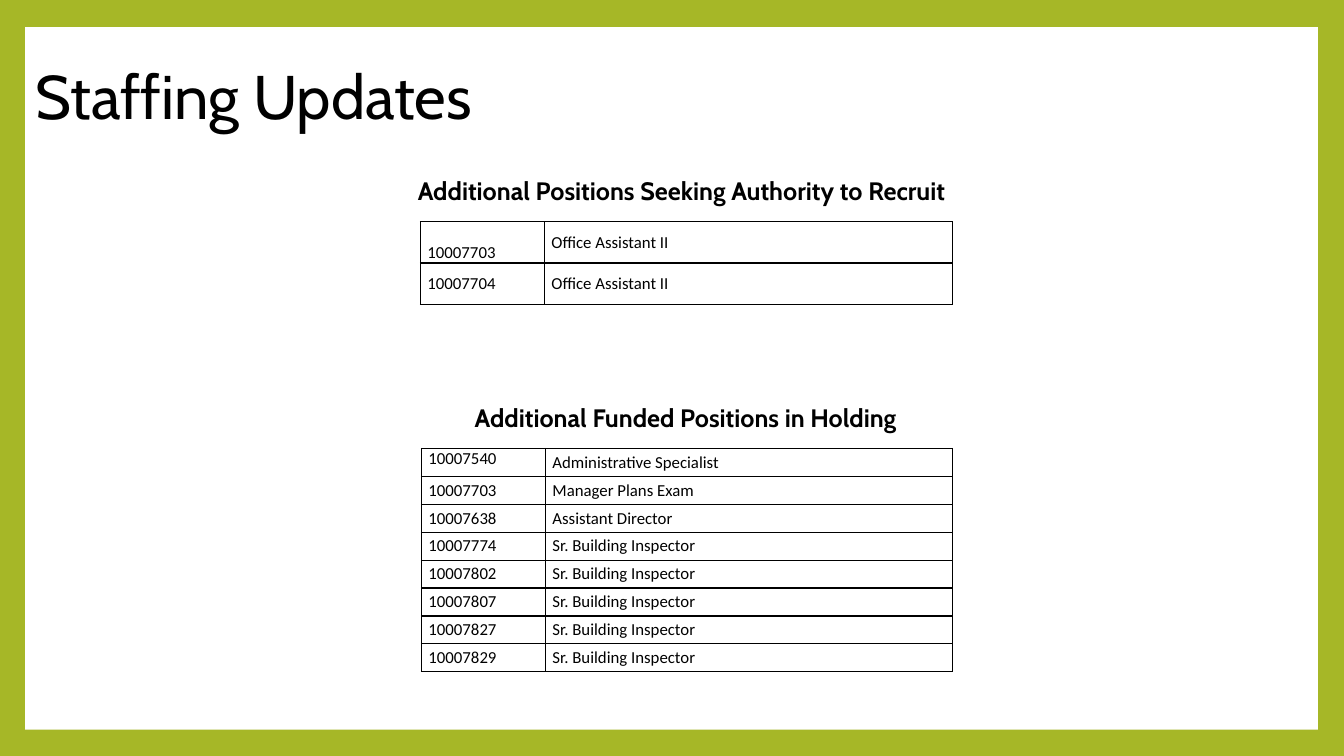
from dataclasses import dataclass

from lxml import etree
from pptx import Presentation
from pptx.dml.color import RGBColor
from pptx.enum.shapes import MSO_SHAPE
from pptx.enum.text import MSO_ANCHOR, MSO_AUTO_SIZE, PP_ALIGN
from pptx.oxml.ns import qn
from pptx.util import Inches, Pt

TOP, MIDDLE, BOTTOM = MSO_ANCHOR.TOP, MSO_ANCHOR.MIDDLE, MSO_ANCHOR.BOTTOM
LEFT, CENTER = PP_ALIGN.LEFT, PP_ALIGN.CENTER
RECTANGLE = MSO_SHAPE.RECTANGLE
FIXED_SIZE = MSO_AUTO_SIZE.NONE

TITLE = "Staffing Updates"
SECTIONS = [
    {
        "heading": "Additional Positions Seeking Authority to Recruit",
        "heading_at": (3.95, 1.69),
        "table_at": (4.17, 2.2),
        "columns": (1.23, 4.05),
        "row_height": 0.41,
        "first_anchor": BOTTOM,
        "positions": [
            ("10007703", "Office Assistant II"),
            ("10007704", "Office Assistant II"),
        ],
    },
    {
        "heading": "Additional Funded Positions in Holding",
        "heading_at": (3.99, 3.94),
        "table_at": (4.18, 4.45),
        "columns": (1.23, 4.04),
        "row_height": 0.277,
        "first_anchor": TOP,
        "positions": [
            ("10007540", "Administrative Specialist"),
            ("10007703", "Manager Plans Exam"),
            ("10007638", "Assistant Director"),
            ("10007774", "Sr. Building Inspector"),
            ("10007802", "Sr. Building Inspector"),
            ("10007807", "Sr. Building Inspector"),
            ("10007827", "Sr. Building Inspector"),
            ("10007829", "Sr. Building Inspector"),
        ],
    },
]


@dataclass(frozen=True)
class Theme:
    frame: str = "A6B727"
    panel: str = "FFFFFF"
    ink: str = "000000"
    heading_font: str = "Cabin"
    table_font: str = "Calibri"
    title_size: int = 44
    heading_size: int = 18
    table_size: int = 12
    border_width: int = 1


THEME = Theme()


def write(frame, text, font, size, align=LEFT, bold=False):
    para = frame.paragraphs[0]
    para.alignment = align
    span = para.add_run()
    span.text = text
    span.font.name = font
    span.font.size = Pt(size)
    span.font.bold = bold
    span.font.color.rgb = RGBColor.from_string(THEME.ink)
    return para


def add_borders(cell):
    properties = cell._tc.get_or_add_tcPr()
    for index, side in enumerate(("lnL", "lnR", "lnT", "lnB")):
        line = etree.Element(qn(f"a:{side}"), w=str(Pt(THEME.border_width)))
        fill = etree.SubElement(line, qn("a:solidFill"))
        etree.SubElement(fill, qn("a:srgbClr"), val=THEME.ink)
        properties.insert(index, line)


def add_panel(page):
    panel = page.shapes.add_shape(
        RECTANGLE, Inches(0.25), Inches(0.27), Inches(12.82), Inches(6.97)
    )
    panel.shadow.inherit = False
    panel.fill.solid()
    panel.fill.fore_color.rgb = RGBColor.from_string(THEME.panel)
    panel.line.fill.background()
    page.shapes._spTree.insert(2, panel._element)


def add_title(page):
    title = page.shapes.title
    title.left, title.top = Inches(0.25), Inches(0.25)
    title.width, title.height = Inches(10.8), Inches(1.48)
    title.text_frame.auto_size = FIXED_SIZE
    title.text_frame.vertical_anchor = MIDDLE
    para = write(title.text_frame, TITLE, THEME.heading_font, THEME.title_size)
    para.line_spacing = 0.9


def add_heading(page, section):
    left, top = section["heading_at"]
    box = page.shapes.add_textbox(Inches(left), Inches(top), Inches(5.62), Inches(0.4))
    box.text_frame.word_wrap = True
    write(box.text_frame, section["heading"], THEME.heading_font,
          THEME.heading_size, CENTER, True)


def add_positions(page, section):
    positions, columns = section["positions"], section["columns"]
    left, top = section["table_at"]
    height = section["row_height"]
    table = page.shapes.add_table(
        len(positions), len(columns), Inches(left), Inches(top),
        Inches(sum(columns)), Inches(height * len(positions)),
    ).table
    table.first_row = False
    table.horz_banding = False
    for column, width in zip(table.columns, columns):
        column.width = Inches(width)
    for row, position in zip(table.rows, positions):
        row.height = Inches(height)
        for cell, text in zip(row.cells, position):
            cell.margin_left = cell.margin_right = Inches(0.07)
            cell.margin_top = cell.margin_bottom = 0
            cell.vertical_anchor = MIDDLE
            cell.fill.background()
            add_borders(cell)
            write(cell.text_frame, text, THEME.table_font, THEME.table_size)
    table.cell(0, 0).vertical_anchor = section["first_anchor"]


def main():
    deck = Presentation()
    deck.slide_width, deck.slide_height = Inches(13.33), Inches(7.5)
    page = deck.slides.add_slide(deck.slide_layouts[5])
    page.background.fill.solid()
    page.background.fill.fore_color.rgb = RGBColor.from_string(THEME.frame)
    add_panel(page)
    add_title(page)
    for section in SECTIONS:
        add_heading(page, section)
        add_positions(page, section)
    deck.save("out.pptx")


if __name__ == "__main__":
    main()
